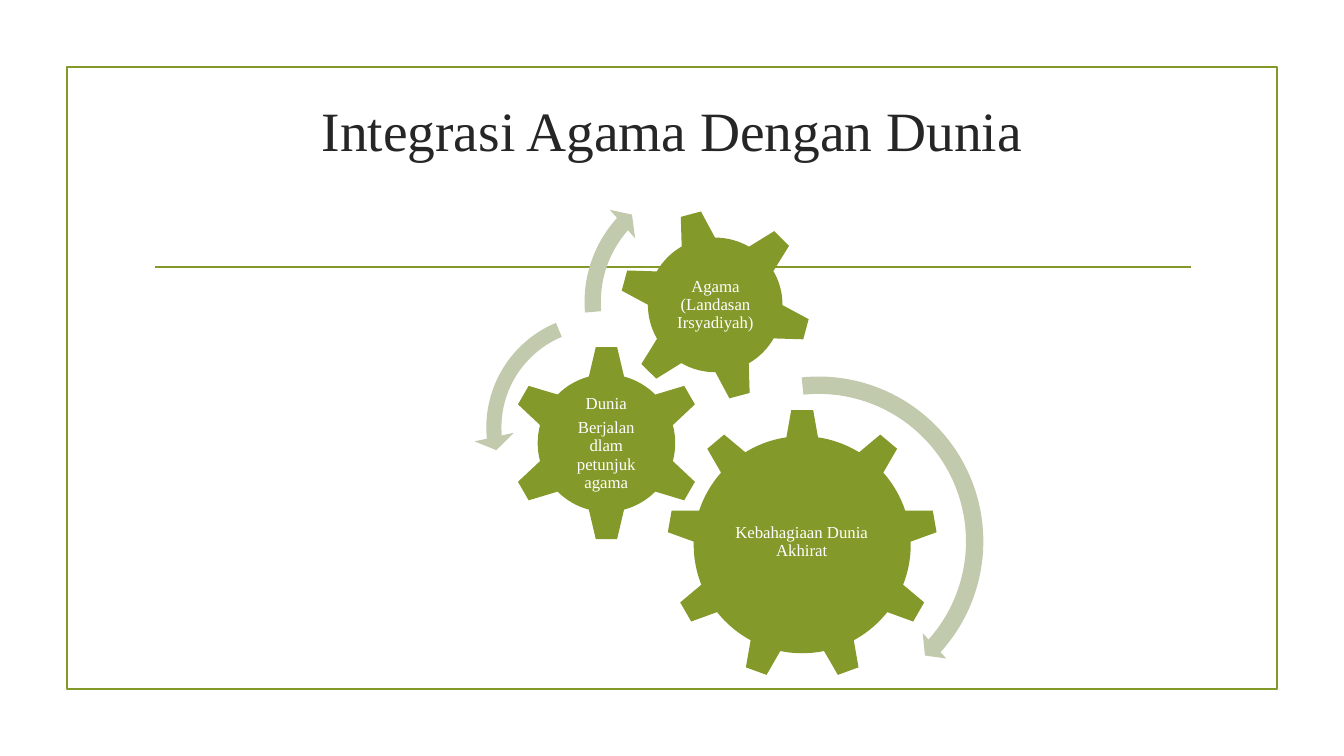
from lxml.etree import SubElement
from pptx import Presentation
from pptx.dml.color import RGBColor
from pptx.enum.shapes import MSO_CONNECTOR, MSO_SHAPE
from pptx.enum.text import MSO_ANCHOR, MSO_AUTO_SIZE, PP_ALIGN
from pptx.oxml.ns import qn
from pptx.util import Inches, Pt

COLS, ROWS = 32, 18
GREEN, SAGE, WHITE, INK = "83992A", "C1CAAD", "FFFFFF", "262626"


def tint(code):
    return RGBColor.from_string(code)


def write(frame, *lines, size=12, color=WHITE, font="Times New Roman",
          inset=0.02, leading=0.9, after=4.2):
    frame.word_wrap = True
    frame.auto_size = MSO_AUTO_SIZE.NONE
    frame.vertical_anchor = MSO_ANCHOR.MIDDLE
    frame.margin_left = frame.margin_right = Inches(inset)
    frame.margin_top = frame.margin_bottom = Inches(inset)
    for i, line in enumerate(lines):
        para = frame.add_paragraph() if i else frame.paragraphs[0]
        para.alignment = PP_ALIGN.CENTER
        para.line_spacing = leading
        para.space_before = Pt(0)
        para.space_after = Pt(after)
        run = para.add_run()
        run.text = line
        run.font.size = Pt(size)
        run.font.name = font
        run.font.color.rgb = tint(color)


class Board:
    def __init__(self):
        self.deck = Presentation()
        self.deck.slide_width = Inches(13.33)
        self.deck.slide_height = Inches(7.5)
        self.slide = self.deck.slides.add_slide(self.deck.slide_layouts[5])
        self.shapes = self.slide.shapes

    def place(self, *cells):
        units = self.deck.slide_width / COLS, self.deck.slide_height / ROWS
        return [round(cell * units[i % 2]) for i, cell in enumerate(cells)]

    def title(self, text, *box):
        head = self.shapes.title
        head.left, head.top, head.width, head.height = self.place(*box)
        write(head.text_frame, text, size=39.6, color=INK, inset=0.05, after=0)

    def shape(self, kind, box, fill=None, line=None, turn=0, adjust=()):
        item = self.shapes.add_shape(kind, *self.place(*box))
        item.shadow.inherit = False
        item.rotation = turn
        if fill:
            item.fill.solid()
            item.fill.fore_color.rgb = tint(fill)
        else:
            item.fill.background()
        if line:
            item.line.color.rgb = tint(line)
            item.line.width = Pt(1.25)
        else:
            item.line.fill.background()
        for i, value in enumerate(adjust):
            item.adjustments[i] = value

    def rule(self, *ends):
        line = self.shapes.add_connector(MSO_CONNECTOR.STRAIGHT, *self.place(*ends))
        line.line.color.rgb = tint(GREEN)
        line.line.width = Pt(1.25)
        SubElement(line._element.spPr, qn("a:effectLst"))

    def gear(self, kind, left, top, size, label, lines, turn=0):
        self.shape(kind, (left, top, size, size), fill=GREEN, turn=turn)
        box = self.shapes.add_textbox(*self.place(*label))
        write(box.text_frame, *lines)

    def arrow(self, kind, left, top, size, adjust):
        self.shape(kind, (left, top, size, size), fill=SAGE, adjust=adjust)


def main():
    board = Board()
    board.shape(MSO_SHAPE.RECTANGLE, (1.6, 1.6, 28.8, 14.8), line=GREEN)
    board.rule(3.68, 6.36, 28.35, 6.36)
    board.title("Integrasi Agama Dengan Dunia", 3.4, 2.57, 25.2, 1.22)
    board.gear(MSO_SHAPE.GEAR_9, 15.87, 9.74, 6.46, (17.16, 11.26, 3.86, 3.31),
               ["Kebahagiaan Dunia Akhirat"])
    board.gear(MSO_SHAPE.GEAR_6, 12.1, 8.21, 4.68, (13.27, 9.41, 2.33, 2.3),
               ["Dunia", "Berjalan dlam petunjuk agama"])
    board.gear(MSO_SHAPE.GEAR_6, 14.74, 4.97, 4.58, (15.75, 5.98, 2.57, 2.57),
               ["Agama (Landasan Irsyadiyah)"], turn=345)
    board.arrow(MSO_SHAPE.CIRCULAR_ARROW, 15.36, 8.76, 8.26,
                (0.05, 2.99, 25.22, 158.48, 0.05))
    board.arrow(MSO_SHAPE.LEFT_CIRCULAR_ARROW, 11.28, 7.18, 6,
                (0.06, 4.3, 104.89, 148.38, 0.08))
    board.arrow(MSO_SHAPE.CIRCULAR_ARROW, 13.66, 3.96, 6.46,
                (0.06, 3.94, 133.14, 105.08, 0.07))
    board.deck.save("out.pptx")


if __name__ == "__main__":
    main()
